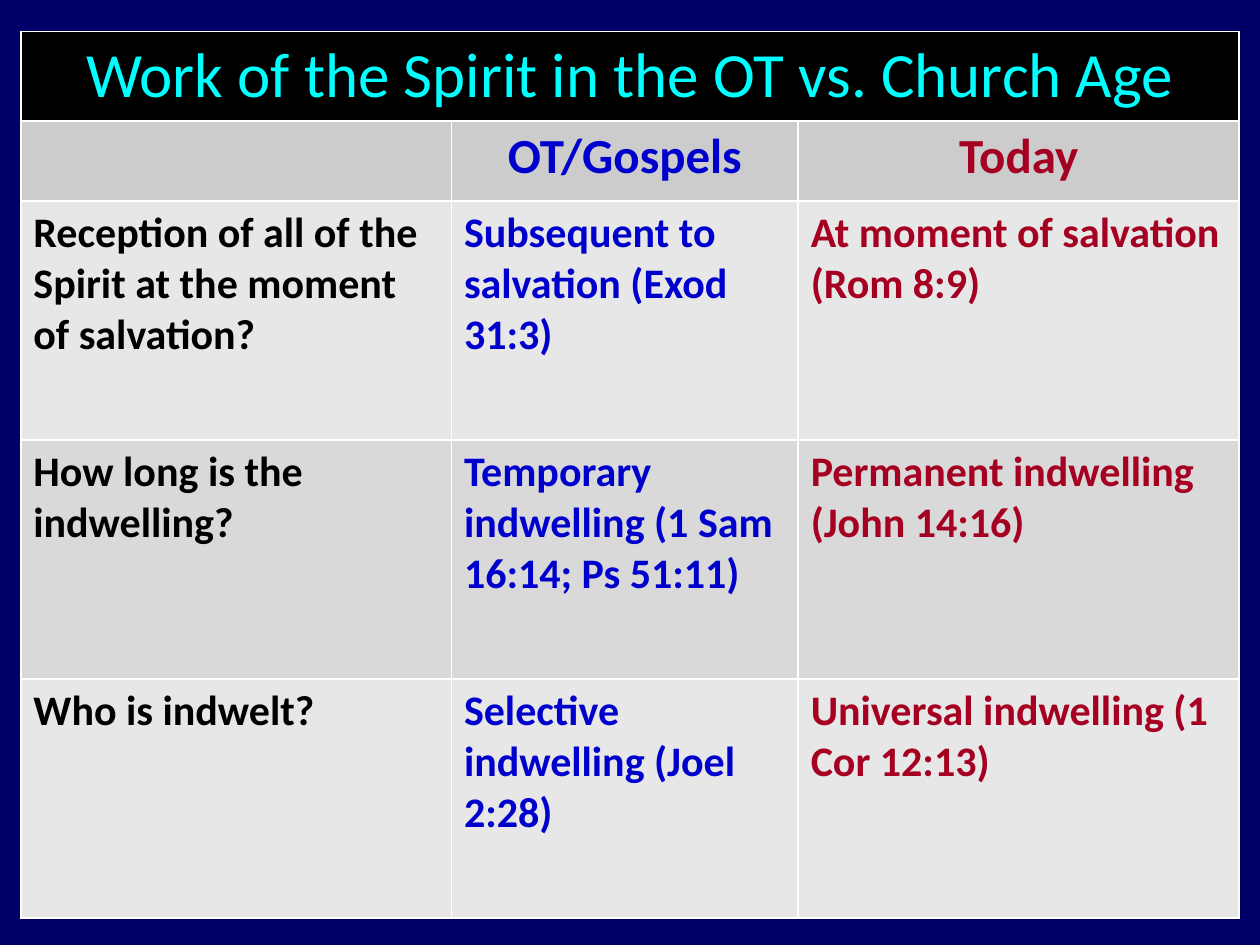
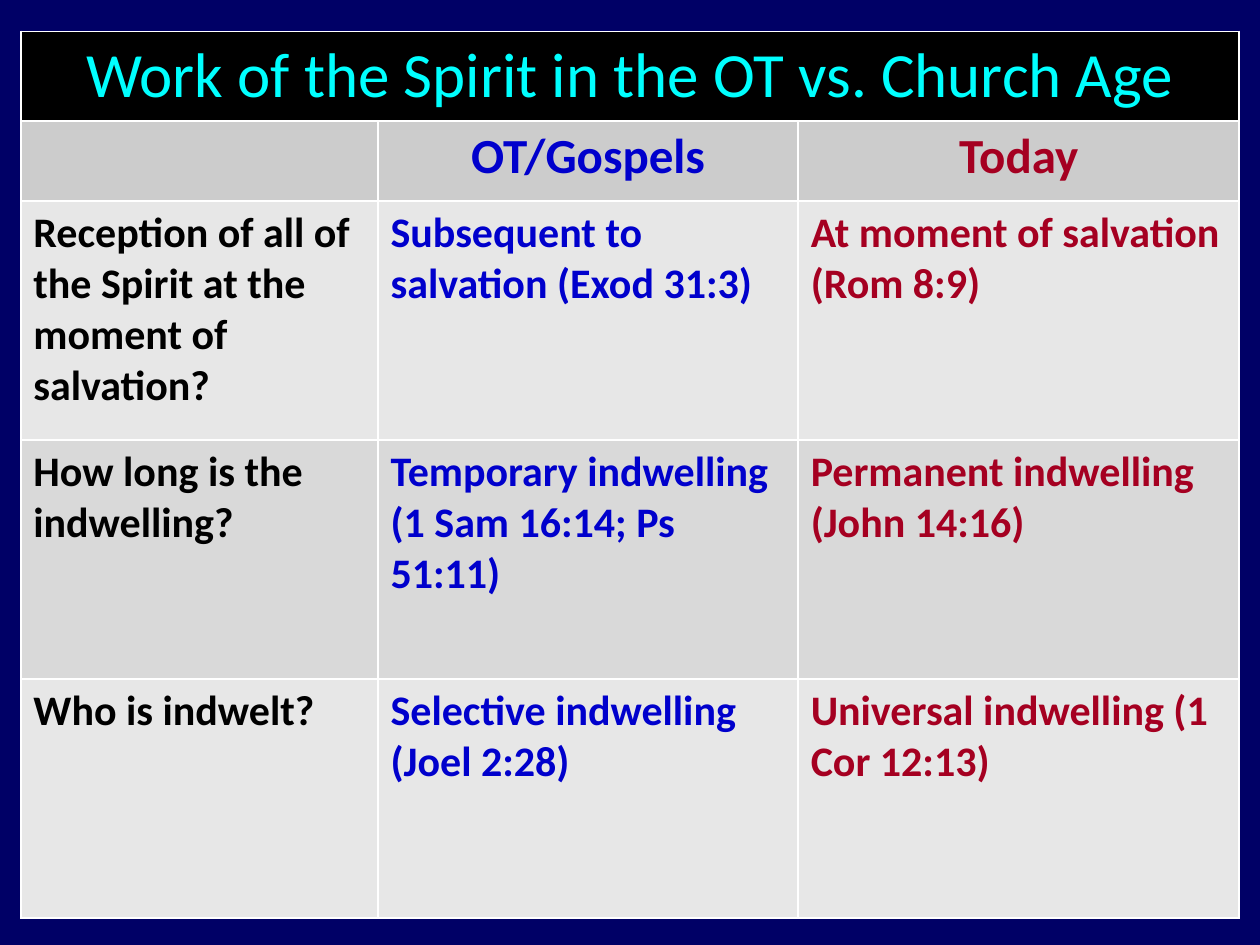
from lxml import etree
from pptx import Presentation
from pptx.dml.color import RGBColor
from pptx.enum.text import MSO_ANCHOR, PP_ALIGN
from pptx.oxml.ns import qn
from pptx.util import Cm, Pt

COLORS = {
    "background": "000066",
    "title": "00FFFF",
    "title_band": "000000",
    "header_band": "CCCCCC",
    "light_band": "E7E7E7",
    "dark_band": "D9D9D9",
    "question": "000000",
    "old_testament": "0000CC",
    "today": "A50021",
    "border": "FFFFFF",
}
FONT = "Calibri"
TITLE = "Work of the Spirit in the OT vs. Church Age"
HEADERS = ["", "OT/Gospels", "Today"]
COMPARISONS = [
    ["Reception of all of the Spirit at the moment of salvation?",
     "Subsequent to salvation (Exod 31:3)",
     "At moment of salvation (Rom 8:9)"],
    ["How long is the indwelling?",
     "Temporary indwelling (1 Sam 16:14; Ps 51:11)",
     "Permanent indwelling (John 14:16)"],
    ["Who is indwelt?",
     "Selective indwelling (Joel 2:28)",
     "Universal indwelling (1 Cor 12:13)"],
]
COLUMN_COLORS = ["question", "old_testament", "today"]
BODY_BANDS = ["light_band", "dark_band"]
ROW_HEIGHTS = [1.78, 1.61] + [4.82] * len(COMPARISONS)
# Column widths in centimetres, one list per slide
COLUMN_WIDTHS = [[8.68, 6.99, 8.89], [7.2, 8.47, 8.89]]


def rgb(name):
    return RGBColor.from_string(COLORS[name])


class Deck:
    """Holds the shared style and the slide being built."""

    def __init__(self):
        self.presentation = Presentation()
        self.presentation.slide_width = Cm(25.4)
        self.presentation.slide_height = Cm(19.05)
        self.slide = None

    def add_slide(self):
        blank_layout = self.presentation.slide_layouts[6]
        self.slide = self.presentation.slides.add_slide(blank_layout)
        fill = self.slide.background.fill
        fill.solid()
        fill.fore_color.rgb = rgb("background")

    def add_borders(self, cell):
        properties = cell._tc.get_or_add_tcPr()
        for position, side in enumerate(["lnL", "lnR", "lnT", "lnB"]):
            line = etree.Element(qn(f"a:{side}"), w=str(Pt(1)))
            fill = etree.SubElement(line, qn("a:solidFill"))
            etree.SubElement(fill, qn("a:srgbClr"), val=COLORS["border"])
            properties.insert(position, line)

    def fill_cell(self, cell, text, band, color, size, bold=True, centered=False):
        cell.fill.solid()
        cell.fill.fore_color.rgb = rgb(band)
        cell.text_frame.text = text
        paragraph = cell.text_frame.paragraphs[0]
        paragraph.alignment = PP_ALIGN.CENTER if centered else PP_ALIGN.LEFT
        for run in paragraph.runs:
            run.font.name = FONT
            run.font.size = Pt(size)
            run.font.bold = bold
            run.font.color.rgb = rgb(color)

    def add_comparison_table(self, widths):
        frame = self.slide.shapes.add_table(
            len(ROW_HEIGHTS), len(widths), Cm(0.42), Cm(0.63),
            Cm(sum(widths)), Cm(sum(ROW_HEIGHTS)))
        table = frame.table
        table.first_row = table.horz_banding = False
        for column, width in zip(table.columns, widths):
            column.width = Cm(width)
        for row, height in zip(table.rows, ROW_HEIGHTS):
            row.height = Cm(height)

        title_cell = table.cell(0, 0)
        title_cell.merge(table.cell(0, len(widths) - 1))
        title_cell.vertical_anchor = MSO_ANCHOR.MIDDLE
        self.fill_cell(title_cell, TITLE, "title_band", "title", 36,
                       bold=False, centered=True)
        for index, color in enumerate(COLUMN_COLORS):
            self.fill_cell(table.cell(1, index), HEADERS[index], "header_band",
                           color, 28, centered=True)
            for row_index, texts in enumerate(COMPARISONS):
                self.fill_cell(table.cell(row_index + 2, index), texts[index],
                               BODY_BANDS[row_index % 2], color, 24)
        for cell in table.iter_cells():
            self.add_borders(cell)


def main():
    deck = Deck()
    for widths in COLUMN_WIDTHS:
        deck.add_slide()
        deck.add_comparison_table(widths)
    deck.presentation.save("out.pptx")


if __name__ == "__main__":
    main()
